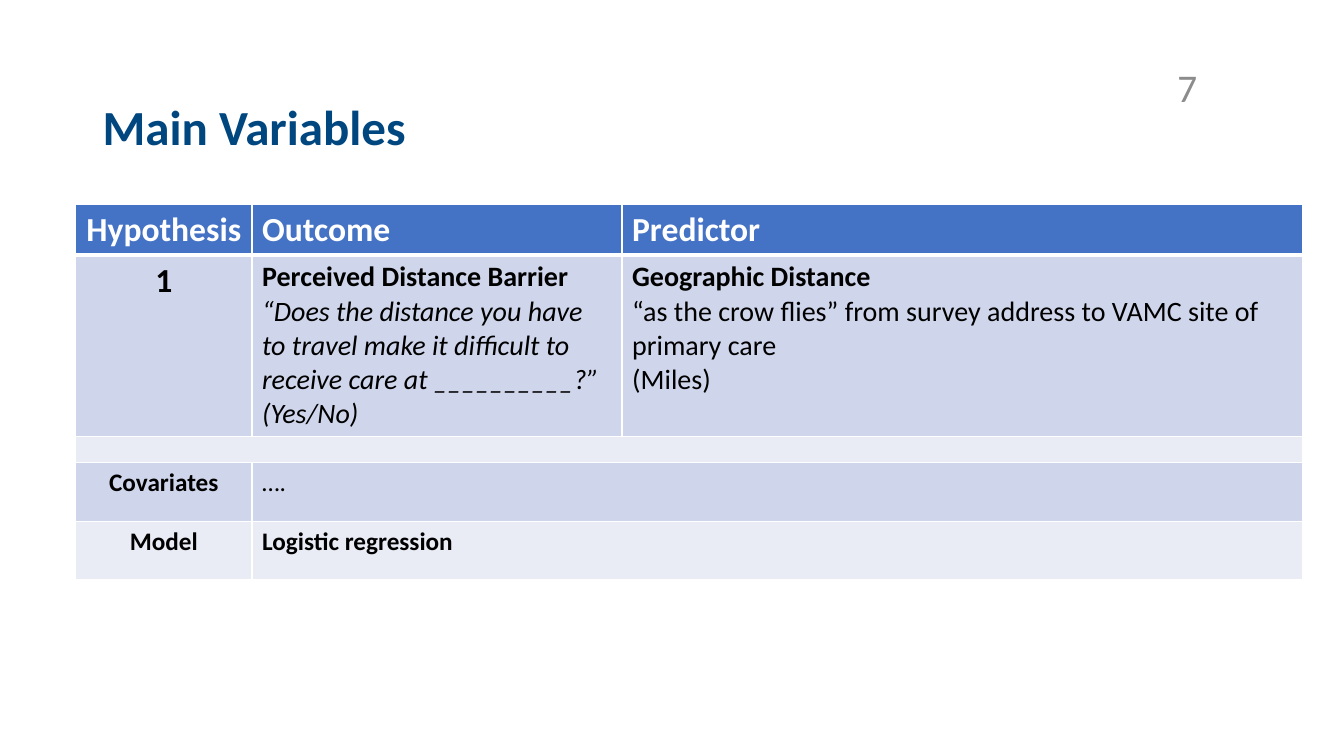
"""Build the slide that lists the main variables of the hypothesis."""
from lxml.etree import SubElement
from pptx import Presentation
from pptx.dml.color import RGBColor
from pptx.enum.text import MSO_ANCHOR as Anchor, PP_ALIGN as Align
from pptx.oxml.ns import qn
from pptx.util import Inches, Pt

COLORS = {"title": "00467F", "number": "8C8C8C", "header": "4472C4", "dark": "CFD5EA",
          "light": "E9EBF5", "white": "FFFFFF", "black": "000000"}


def write(frame, lines, color, size, align=Align.LEFT):
    for index, (text, style) in enumerate(lines):
        para = frame.paragraphs[0] if index == 0 else frame.add_paragraph()
        para.alignment = align
        span = para.add_run()
        span.text = text
        span.font.color.rgb = RGBColor.from_string(COLORS[color])
        for name, value in {"name": "Calibri", "size": Pt(size), **style}.items():
            setattr(span.font, name, value)


def draw_borders(cell, bottom):
    properties = cell._tc.get_or_add_tcPr()
    for side, width in {"lnL": 1, "lnR": 1, "lnT": 1, "lnB": bottom}.items():
        line = SubElement(properties, qn(f"a:{side}"), w=str(Pt(width)))
        fill = SubElement(line, qn("a:solidFill"))
        SubElement(fill, qn("a:srgbClr"), val=COLORS["white"])


BOLD, ITALIC, PLAIN = {"bold": True}, {"italic": True}, {"bold": False}

deck = Presentation()
deck.slide_width, deck.slide_height = Inches(13.33), Inches(7.5)
page = deck.slides.add_slide(deck.slide_layouts[6])

BOXES = [
    ((0.92, 0.71, 11.5, 1.15), "Main Variables", "title", 35, BOLD, Anchor.MIDDLE, 0.9),
    ((11.58, 0.58, 0.6, 0.51), "7", "number", 28, PLAIN, Anchor.TOP, 1.0),
]
for place, text, color, size, style, anchor, spacing in BOXES:
    box = page.shapes.add_textbox(*map(Inches, place))
    frame = box.text_frame
    frame.word_wrap = True
    frame.vertical_anchor = anchor
    write(frame, [(text, style)], color, size)
    frame.paragraphs[0].line_spacing = spacing

COLUMNS = [1.75, 3.67, 6.75]
ROWS = [
    (0.49, "header", "white", (24, 24), [
        [("Hypothesis", BOLD)], [("Outcome", BOLD)], [("Predictor", BOLD)]]),
    (1.8, "dark", "black", (24, 20), [
        [("1", BOLD)],
        [("Perceived Distance Barrier", BOLD),
         ("“Does the distance you have to travel make it difficult to receive care at "
          "__________?” (Yes/No)", ITALIC)],
        [("Geographic Distance", BOLD),
         ("“as the crow flies” from survey address to VAMC site of primary care", PLAIN),
         ("(Miles)", PLAIN)]]),
    (0.26, "light", "black", (8, 8), [[]]),
    (0.58, "dark", "black", (18, 18), [[("Covariates", BOLD)], [("….", PLAIN)]]),
    (0.58, "light", "black", (18, 18), [[("Model", BOLD)], [("Logistic regression", BOLD)]]),
]
heights = [row[0] for row in ROWS]
table = page.shapes.add_table(len(ROWS), len(COLUMNS), Inches(0.75), Inches(2.03),
                              Inches(sum(COLUMNS)), Inches(sum(heights))).table
for column, width in zip(table.columns, COLUMNS):
    column.width = Inches(width)

last = len(COLUMNS) - 1
for r, (height, fill, color, sizes, contents) in enumerate(ROWS):
    table.rows[r].height = Inches(height)
    for c in range(len(COLUMNS)):
        cell = table.cell(r, c)
        draw_borders(cell, 3 if r == 0 else 1)
        cell.fill.solid()
        cell.fill.fore_color.rgb = RGBColor.from_string(COLORS[fill])
        if c >= len(contents) or not contents[c]:
            SubElement(cell.text_frame.paragraphs[0]._p, qn("a:endParaRPr"), sz="800")
            continue
        write(cell.text_frame, contents[c], color, sizes[min(c, 1)],
              Align.LEFT if c else Align.CENTER)
    if len(contents) <= last:
        table.cell(r, len(contents) - 1).merge(table.cell(r, last))

deck.save("out.pptx")
